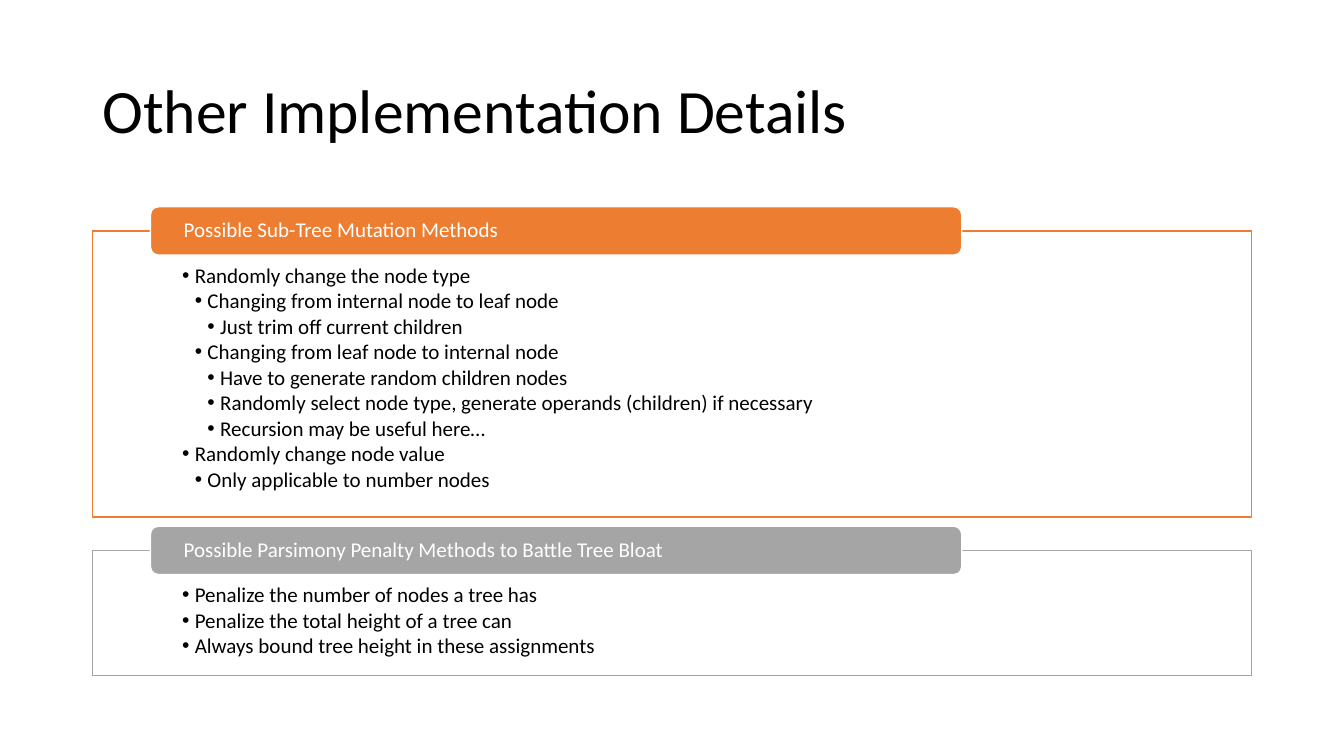
from lxml import etree
from pptx import Presentation
from pptx.dml.color import RGBColor
from pptx.enum.shapes import MSO_SHAPE
from pptx.enum.text import MSO_ANCHOR, PP_ALIGN
from pptx.oxml.ns import qn
from pptx.util import Cm, Pt

RECTANGLE = MSO_SHAPE.RECTANGLE
ROUNDED = MSO_SHAPE.ROUNDED_RECTANGLE
TOP, MIDDLE = MSO_ANCHOR.TOP, MSO_ANCHOR.MIDDLE
LEFT = PP_ALIGN.LEFT

FONT = "Calibri"
BLACK, WHITE, ORANGE, GRAY = "000000", "FFFFFF", "ED7D31", "A5A5A5"
MARGIN, CONTENT_WIDTH = 2.33, 29.21
INDENT = 0.32

SECTIONS = [
    ("Possible Sub-Tree Mutation Methods", ORANGE, 5.82, 7.21, [
        (1, "Randomly change the node type"),
        (2, "Changing from internal node to leaf node"),
        (3, "Just trim off current children"),
        (2, "Changing from leaf node to internal node"),
        (3, "Have to generate random children nodes"),
        (3, "Randomly select node type, generate operands (children) if necessary"),
        (3, "Recursion may be useful here…"),
        (1, "Randomly change node value"),
        (2, "Only applicable to number nodes"),
    ]),
    ("Possible Parsimony Penalty Methods to Battle Tree Bloat", GRAY, 13.87, 3.15, [
        (1, "Penalize the number of nodes a tree has"),
        (1, "Penalize the total height of a tree can"),
        (1, "Always bound tree height in these assignments"),
    ]),
]


def color(value):
    return RGBColor.from_string(value)


def set_frame(box, anchor, side, top, bottom):
    frame = box.text_frame
    frame.word_wrap = True
    frame.vertical_anchor = anchor
    frame.margin_left = frame.margin_right = Cm(side)
    frame.margin_top, frame.margin_bottom = Cm(top), Cm(bottom)
    return frame


def add_text(para, text, size, ink):
    para.alignment = LEFT
    para.line_spacing = 0.9
    span = para.add_run()
    span.text = text
    span.font.name = FONT
    span.font.size = Pt(size)
    span.font.color.rgb = color(ink)


def add_bullet(para, level):
    para.level = level
    para.space_after = Pt(2)
    properties = para._p.get_or_add_pPr()
    properties.set("marL", str(Cm(INDENT * level)))
    properties.set("indent", str(-Cm(INDENT)))
    etree.SubElement(properties, qn("a:buFont")).set("typeface", "Arial")
    etree.SubElement(properties, qn("a:buChar")).set("char", "•")


def add_box(page, kind, left, top, width, height, fill, line):
    box = page.shapes.add_shape(kind, Cm(left), Cm(top), Cm(width), Cm(height))
    box.shadow.inherit = False
    box.fill.solid()
    box.fill.fore_color.rgb = color(fill)
    box.line.color.rgb = color(line)
    box.line.width = Pt(1)
    return box


def add_title(page, text, left, top, width, height):
    box = page.shapes.add_textbox(Cm(left), Cm(top), Cm(width), Cm(height))
    frame = set_frame(box, MIDDLE, 0.25, 0.13, 0.13)
    add_text(frame.paragraphs[0], text, 44, BLACK)


def add_section(page, heading, accent, items, left, top, width, height):
    body = add_box(page, RECTANGLE, left, top, width, height, WHITE, accent)
    frame = set_frame(body, TOP, 2.26, 0.86, 0.3)
    for index, (level, text) in enumerate(items):
        para = frame.add_paragraph() if index else frame.paragraphs[0]
        add_bullet(para, level)
        add_text(para, text, 15, BLACK)

    header = add_box(page, ROUNDED, left + width * 0.05, top - 0.61,
                     width * 0.7, 1.22, accent, WHITE)
    frame = set_frame(header, MIDDLE, 0.78, 0, 0)
    add_text(frame.paragraphs[0], heading, 15, WHITE)


def main():
    deck = Presentation()
    deck.slide_width, deck.slide_height = Cm(33.87), Cm(19.05)
    page = deck.slides.add_slide(deck.slide_layouts[6])
    add_title(page, "Other Implementation Details", MARGIN, 1.01, CONTENT_WIDTH, 3.68)
    for heading, accent, top, height, items in SECTIONS:
        add_section(page, heading, accent, items, MARGIN, top, CONTENT_WIDTH, height)
    deck.save("out.pptx")


if __name__ == "__main__":
    main()
